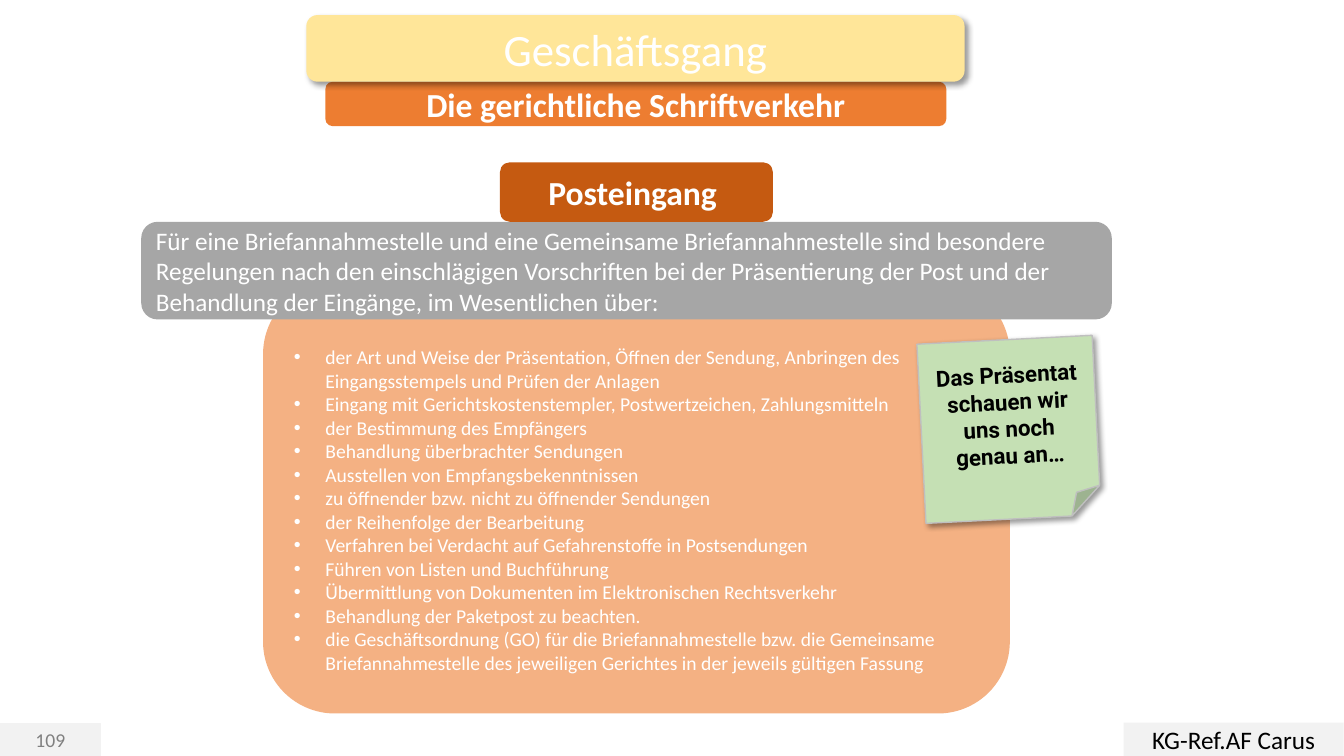
from dataclasses import dataclass
from typing import Optional

from lxml import etree
from pptx import Presentation
from pptx.dml.color import RGBColor
from pptx.enum.shapes import MSO_SHAPE
from pptx.enum.text import MSO_ANCHOR, PP_ALIGN
from pptx.oxml.ns import qn
from pptx.util import Cm, Pt

RECTANGLE = MSO_SHAPE.RECTANGLE
ROUNDED = MSO_SHAPE.ROUNDED_RECTANGLE
FOLDED = MSO_SHAPE.FOLDED_CORNER
LEFT = PP_ALIGN.LEFT
CENTER = PP_ALIGN.CENTER
MIDDLE = MSO_ANCHOR.MIDDLE

COLORS = {
    "white": "FFFFFF",
    "black": "000000",
    "peach": "F4B183",
    "orange": "ED7D31",
    "rust": "C55A11",
    "yellow": "FFE699",
    "grey": "A6A6A6",
    "pale_grey": "F2F2F2",
    "mid_grey": "808080",
    "edge_grey": "BFBFBF",
    "green": "C5E0B4",
}

TOPICS = [
    "der Art und Weise der Präsentation, Öffnen der Sendung, Anbringen des "
    "Eingangsstempels und Prüfen der Anlagen",
    "Eingang mit Gerichtskostenstempler, Postwertzeichen, Zahlungsmitteln",
    "der Bestimmung des Empfängers",
    "Behandlung überbrachter Sendungen",
    "Ausstellen von Empfangsbekenntnissen",
    "zu öffnender bzw. nicht zu öffnender Sendungen",
    "der Reihenfolge der Bearbeitung",
    "Verfahren bei Verdacht auf Gefahrenstoffe in Postsendungen",
    "Führen von Listen und Buchführung",
    "Übermittlung von Dokumenten im Elektronischen Rechtsverkehr",
    "Behandlung der Paketpost zu beachten.",
    "die Geschäftsordnung (GO) für die Briefannahmestelle bzw. die Gemeinsame "
    "Briefannahmestelle des jeweiligen Gerichtes in der jeweils gültigen Fassung",
]

INTRODUCTION = (
    "Für eine Briefannahmestelle und eine Gemeinsame Briefannahmestelle sind "
    "besondere Regelungen nach den einschlägigen Vorschriften bei der "
    "Präsentierung der Post und der Behandlung der Eingänge, im Wesentlichen über:"
)


@dataclass
class Box:
    text: str
    left: float
    top: float
    width: float
    height: float
    fill: str
    size: int
    geometry: MSO_SHAPE = ROUNDED
    color: str = "white"
    bold: bool = False
    font: str = "Calibri"
    alignment: PP_ALIGN = CENTER
    line: Optional[str] = None
    shadow: bool = False
    rotation: float = 0
    bullets: bool = False
    margin_top: float = 0.13


BOXES = [
    Box("\n".join(TOPICS), 6.63, 7.11, 18.82, 10.87, "peach", 14,
        alignment=LEFT, bullets=True, margin_top=0.72),
    Box("109", 0, 18.24, 2.54, 0.81, "pale_grey", 14,
        geometry=RECTANGLE, color="mid_grey", line="pale_grey"),
    Box("KG-Ref.AF Carus", 28.32, 18.21, 5.54, 0.84, "pale_grey", 18,
        geometry=RECTANGLE, color="black"),
    Box("Die gerichtliche Schriftverkehr", 8.2, 2.06, 15.65, 1.12, "orange", 24,
        bold=True),
    Box("Geschäftsgang", 7.72, 0.38, 16.59, 1.68, "yellow", 32, shadow=True),
    Box(INTRODUCTION, 3.56, 5.59, 24.46, 2.46, "grey", 18, alignment=LEFT),
    Box("Posteingang ", 12.6, 4.09, 6.88, 1.5, "rust", 24, bold=True),
    Box("Das Präsentat schauen wir uns noch genau an…", 23.22, 8.56, 4.42, 4.52,
        "green", 16, geometry=FOLDED, color="black", bold=True, font="Roboto",
        line="edge_grey", shadow=True, rotation=357.1),
]


def rgb(name: str) -> RGBColor:
    return RGBColor.from_string(COLORS[name])


def add_shadow(shape) -> None:
    effects = shape._element.spPr.find(qn("a:effectLst"))
    outer = etree.SubElement(
        effects, qn("a:outerShdw"), blurRad=str(Pt(4)), dist=str(Pt(3)),
        dir=str(45 * 60000), algn="tl", rotWithShape="0")
    color = etree.SubElement(outer, qn("a:srgbClr"), val=COLORS["black"])
    etree.SubElement(color, qn("a:alpha"), val="40000")


def add_bullet(paragraph) -> None:
    properties = paragraph._p.get_or_add_pPr()
    indent = Cm(0.79)
    properties.set("marL", str(indent))
    properties.set("indent", str(-indent))
    etree.SubElement(properties, qn("a:buFont"), typeface="Arial")
    etree.SubElement(properties, qn("a:buChar"), char="•")


def write_text(shape, box: Box) -> None:
    text_frame = shape.text_frame
    text_frame.text = box.text
    text_frame.word_wrap = True
    text_frame.vertical_anchor = MIDDLE
    text_frame.margin_top = Cm(box.margin_top)
    for paragraph in text_frame.paragraphs:
        paragraph.alignment = box.alignment
        if box.bullets:
            add_bullet(paragraph)
        for run in paragraph.runs:
            run.font.name = box.font
            run.font.size = Pt(box.size)
            run.font.bold = box.bold
            run.font.color.rgb = rgb(box.color)


def add_box(slide, box: Box) -> None:
    shape = slide.shapes.add_shape(
        box.geometry, Cm(box.left), Cm(box.top), Cm(box.width), Cm(box.height))
    shape.rotation = box.rotation
    shape.fill.solid()
    shape.fill.fore_color.rgb = rgb(box.fill)
    if box.line:
        shape.line.color.rgb = rgb(box.line)
        shape.line.width = Pt(1)
    else:
        shape.line.fill.background()
    shape.shadow.inherit = False
    if box.shadow:
        add_shadow(shape)
    write_text(shape, box)


def main() -> None:
    presentation = Presentation()
    presentation.slide_width = Cm(33.87)
    presentation.slide_height = Cm(19.05)
    slide = presentation.slides.add_slide(presentation.slide_layouts[6])
    for box in BOXES:
        add_box(slide, box)
    presentation.save("out.pptx")


if __name__ == "__main__":
    main()
